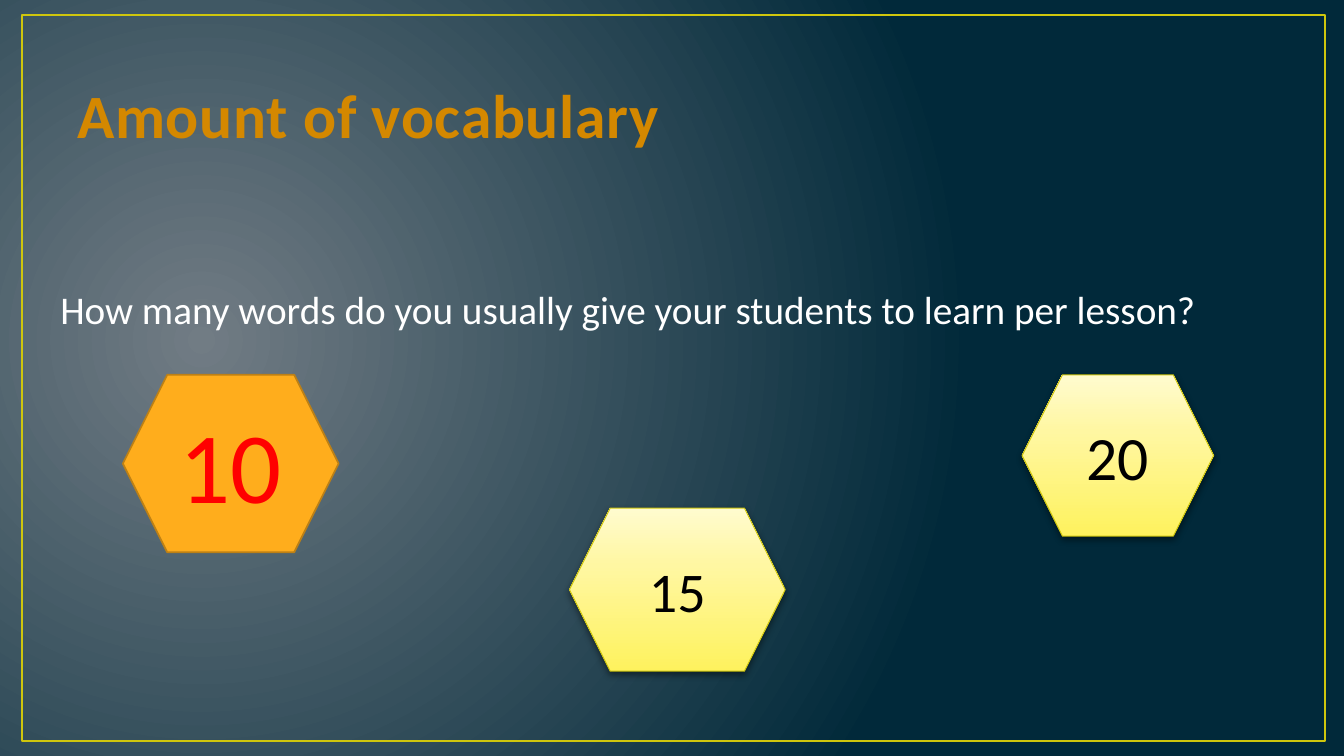
from lxml.etree import SubElement
from pptx import Presentation
from pptx.dml.color import RGBColor
from pptx.enum.shapes import MSO_SHAPE as Shape
from pptx.enum.text import MSO_ANCHOR as Anchor, PP_ALIGN as Align
from pptx.oxml.ns import qn
from pptx.util import Pt

FONT = "Calibri"
GREY = RGBColor(0x71, 0x7C, 0x84)
NAVY = RGBColor(0x01, 0x29, 0x3A)
OLIVE = RGBColor(0xCF, 0xC6, 0x0D)
GOLD = RGBColor(0xD4, 0x88, 0x00)
ORANGE = RGBColor(0xFF, 0xAD, 0x1C)
BROWN = RGBColor(0xBD, 0x80, 0x15)
RED = RGBColor(0xFF, 0x00, 0x00)
BLACK = RGBColor(0x00, 0x00, 0x00)
WHITE = RGBColor(0xFF, 0xFF, 0xFF)
YELLOW = RGBColor(0xFE, 0xF2, 0x5E)
LEMON = RGBColor(0xFF, 0xF7, 0xA2)
CREAM = RGBColor(0xFF, 0xFB, 0xCF)


def add(node, tag, **attrs):
    """Append a drawing element with the given attributes."""
    return SubElement(node, qn(tag), {k: str(v) for k, v in attrs.items()})


def grade(fill, owner, stops):
    """Give a fill its gradient stops and return the gradient element."""
    fill.gradient()
    grad = owner.element.find(".//" + qn("a:gradFill"))
    for child in list(grad):
        grad.remove(child)
    group = add(grad, "a:gsLst")
    for pos, color in stops:
        add(add(group, "a:gs", pos=pos * 1000), "a:srgbClr", val=color)
    return grad


def backdrop(slide):
    """Fill the slide with a round glow."""
    grad = grade(slide.background.fill, slide, [(0, GREY), (100, NAVY)])
    glow = add(grad, "a:path", path="circle")
    add(glow, "a:fillToRect", l=15000, t=50000, r=85000, b=60000)


def outline(slide, kind, box, color, width):
    """Add an unfilled shape with a line and no shadow."""
    shape = slide.shapes.add_shape(kind, *map(Pt, box))
    shape.shadow.inherit = False
    shape.fill.background()
    shape.line.color.rgb = color
    shape.line.width = Pt(width)
    return shape


def write(shape, text, size, color, anchor, align=Align.LEFT):
    """Set the text of a shape and return its paragraph."""
    frame = shape.text_frame
    frame.word_wrap = True
    frame.vertical_anchor = anchor
    para = frame.paragraphs[0]
    para.text = text
    para.alignment = align
    para.font.name = FONT
    para.font.size = Pt(size)
    para.font.color.rgb = color
    return para


def label(slide, text, box, size, color, anchor):
    """Add a text box and return its paragraph."""
    shape = slide.shapes.add_textbox(*map(Pt, box))
    return write(shape, text, size, color, anchor)


def hexagon(slide, text, box, size, color, line, width):
    """Add a hexagon with a centred number."""
    shape = outline(slide, Shape.HEXAGON, box, line, width)
    write(shape, text, size, color, Anchor.MIDDLE, Align.CENTER)
    return shape


def shine(shape):
    """Give a shape a yellow gradient and a soft shadow."""
    stops = [(0, YELLOW), (65, LEMON), (100, CREAM)]
    grad = grade(shape.fill, shape, stops)
    add(grad, "a:lin", ang=270 * 60000, scaled=0)
    effects = shape.element.spPr.find(qn("a:effectLst"))
    shade = add(effects, "a:outerShdw", blurRad=Pt(5), dist=Pt(2),
                dir=90 * 60000, rotWithShape=0)
    add(add(shade, "a:srgbClr", val=BLACK), "a:alpha", val=43000)


def main():
    """Build the vocabulary slide."""
    deck = Presentation()
    deck.slide_width, deck.slide_height = Pt(960), Pt(540)
    slide = deck.slides.add_slide(deck.slide_layouts[6])
    backdrop(slide)
    outline(slide, Shape.RECTANGLE, (15.8, 10.8, 931, 518.4), OLIVE, 1.5)

    title = label(slide, "Amount of vocabulary", (48, 21.6, 864, 90),
                  44, GOLD, Anchor.BOTTOM)
    title.font.bold = True
    title.runs[0].font._element.set("spc", "50")
    label(slide,
          "How many words do you usually give your students to learn per lesson?",
          (36, 200.2, 967, 41), 28, WHITE, Anchor.TOP)

    ten = hexagon(slide, "10", (87.8, 267.8, 154.1, 126.7), 72, RED, BROWN, 1.25)
    ten.fill.solid()
    ten.fill.fore_color.rgb = ORANGE
    for text, box, size in [("15", (406.8, 362.9, 154.1, 116.6), 40),
                            ("20", (730.1, 267.8, 136.8, 115.2), 44)]:
        shine(hexagon(slide, text, box, size, BLACK, OLIVE, 0.75))
    deck.save("out.pptx")


if __name__ == "__main__":
    main()
